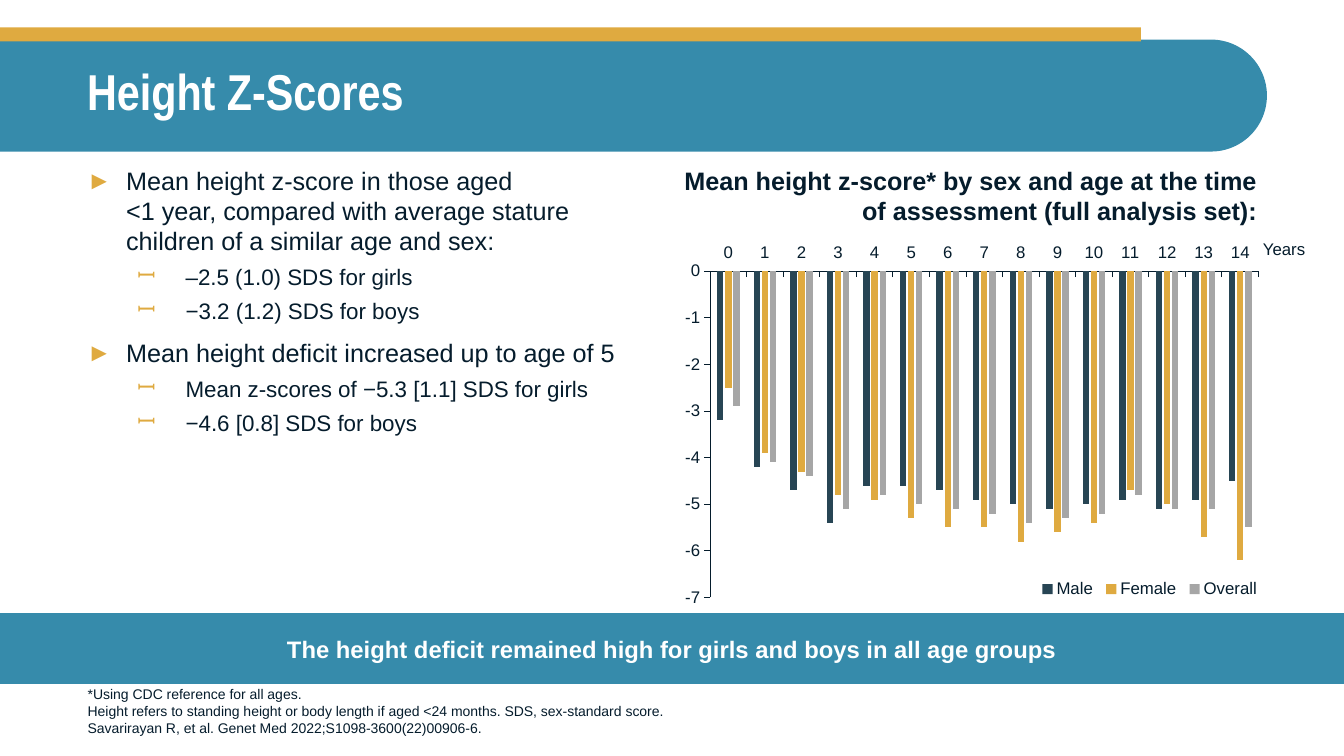
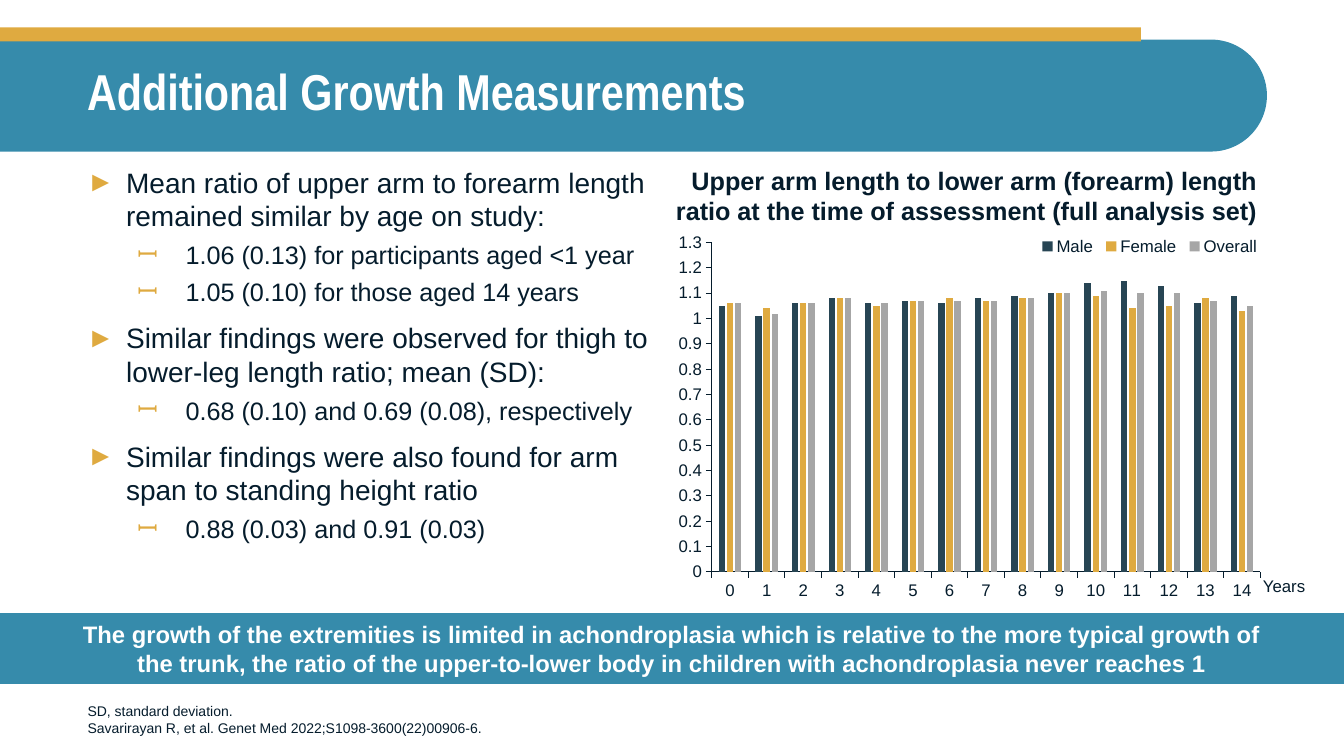
import pptx
import pptx.chart.data
import pptx.dml.color
import pptx.enum.chart
import pptx.enum.shapes
import pptx.enum.text
import pptx.util
from pptx.oxml import parse_xml
from pptx.oxml.ns import nsdecls, qn

Pt = pptx.util.Pt
colour = pptx.dml.color.RGBColor.from_string
SHAPE = pptx.enum.shapes.MSO_SHAPE
ALIGN = pptx.enum.text.PP_ALIGN
ANCHOR = pptx.enum.text.MSO_ANCHOR
TICK = pptx.enum.chart.XL_TICK_LABEL_POSITION

TEAL, GOLD, INK, WHITE = "368BAB", "DFAA40", "051C2C", "FFFFFF"
SERIES_COLOURS = ["274554", GOLD, "A6A6A6"]
AGES = [str(age) for age in range(15)]
REFERENCE = "Savarirayan R, et al. Genet Med 2022;S1098-3600(22)00906-6."

# Bullet character, left margin, hanging indent and space before, by level
BULLETS = [("►", 28, 28, 10), ("ꟷ", 70.5, 34.5, 5)]

SLIDES = [
    {
        "title": "Height Z-Scores",
        "bullet_sizes": (18, 16),
        "body_width": 411,
        "bullets": [
            (0, "Mean height z-score in those aged\v<1 year, compared with average stature "
                "children of a similar age and sex:"),
            (1, "–2.5 (1.0) SDS for girls"),
            (1, "−3.2 (1.2) SDS for boys"),
            (0, "Mean height deficit increased up to age of 5"),
            (1, "Mean z-scores of −5.3 [1.1] SDS for girls"),
            (1, "−4.6 [0.8] SDS for boys"),
        ],
        "heading": "Mean height z-score* by sex and age at the time of assessment (full analysis set):",
        "heading_left": 476,
        "message": "The height deficit remained high for girls and boys in all age groups",
        "notes": [
            "*Using CDC reference for all ages.",
            "Height refers to standing height or body length if aged <24 months. "
            "SDS, sex-standard score.",
            REFERENCE,
        ],
        "years_top": 167,
        "plot_box": (0.063, 0.1, 0.907, 0.857),
        "legend_top": 0.91,
        "age_labels": TICK.HIGH,
        "scale": {"minimum_scale": -7, "maximum_scale": 0, "major_unit": 1},
        "series": {
            "Male": [-3.2, -4.2, -4.7, -5.4, -4.6, -4.6, -4.7, -4.9, -5, -5.1, -5, -4.9, -5.1, -4.9, -4.5],
            "Female": [-2.5, -3.9, -4.3, -4.8, -4.9, -5.3, -5.5, -5.5, -5.8, -5.6, -5.4, -4.7, -5, -5.7, -6.2],
            "Overall": [-2.9, -4.1, -4.4, -5.1, -4.8, -5, -5.1, -5.2, -5.4, -5.3, -5.2, -4.8, -5.1, -5.1, -5.5],
        },
    },
    {
        "title": "Additional Growth Measurements",
        "bullet_sizes": (20, 18),
        "body_width": 421,
        "bullets": [
            (0, "Mean ratio of upper arm to forearm length remained similar by age on study:"),
            (1, "1.06 (0.13) for participants aged <1 year"),
            (1, "1.05 (0.10) for those aged 14 years"),
            (0, "Similar findings were observed for thigh to lower-leg length ratio; mean (SD):"),
            (1, "0.68 (0.10) and 0.69 (0.08), respectively"),
            (0, "Similar findings were also found for arm span to standing height ratio"),
            (1, "0.88 (0.03) and 0.91 (0.03)"),
        ],
        "heading": "Upper arm length to lower arm (forearm) length ratio at the time of assessment "
                   "(full analysis set)",
        "heading_left": 463,
        "message": "The growth of the extremities is limited in achondroplasia which is relative to the "
                   "more typical growth of the trunk, the ratio of the upper-to-lower body in children "
                   "with achondroplasia never reaches 1",
        "notes": ["SD, standard deviation.", REFERENCE],
        "years_top": 408,
        "plot_box": (0.066, 0.025, 0.907, 0.865),
        "legend_top": 0.01,
        "age_labels": TICK.LOW,
        "scale": {"minimum_scale": 0, "maximum_scale": 1.3, "major_unit": 0.1},
        "series": {
            "Male": [1.05, 1.01, 1.06, 1.08, 1.06, 1.07, 1.06, 1.08, 1.09, 1.1, 1.14, 1.15, 1.13, 1.06, 1.09],
            "Female": [1.06, 1.04, 1.06, 1.08, 1.05, 1.07, 1.08, 1.07, 1.08, 1.1, 1.09, 1.04, 1.05, 1.08, 1.03],
            "Overall": [1.06, 1.02, 1.06, 1.08, 1.06, 1.07, 1.07, 1.07, 1.08, 1.1, 1.11, 1.1, 1.1, 1.07, 1.05],
        },
    },
]


def add_panel(slide, kind, box, fill):
    panel = slide.shapes.add_shape(kind, *map(Pt, box))
    panel.shadow.inherit = False
    panel.fill.solid()
    panel.fill.fore_color.rgb = colour(fill)
    panel.line.fill.background()
    return panel


def write(shape, lines, size, ink=INK, bold=False, align=ALIGN.LEFT, anchor=ANCHOR.TOP,
          face="Arial", spacing=1, levels=None):
    """Fill a shape with paragraphs; levels gives the size of each bullet level."""
    frame = shape.text_frame
    frame.word_wrap = True
    frame.vertical_anchor = anchor
    for index, line in enumerate(lines):
        paragraph = frame.paragraphs[0] if index == 0 else frame.add_paragraph()
        level, text = line if levels else (0, line)
        paragraph.text = text
        paragraph.alignment = align
        paragraph.line_spacing = spacing
        if levels:
            size = levels[level]
            character, margin, hanging, before = BULLETS[level]
            paragraph.level = level
            if index:
                paragraph.space_before = Pt(before)
            properties = paragraph._p.get_or_add_pPr()
            properties.set("marL", str(Pt(margin)))
            properties.set("indent", str(-Pt(hanging)))
            for element in (f'<a:buClr {nsdecls("a")}><a:srgbClr val="{GOLD}"/></a:buClr>',
                            f'<a:buFont {nsdecls("a")} typeface="Arial"/>',
                            f'<a:buChar {nsdecls("a")} char="{character}"/>'):
                properties.append(parse_xml(element))
        for name, value in {"name": face, "size": Pt(size), "bold": bold}.items():
            setattr(paragraph.font, name, value)
        paragraph.font.color.rgb = colour(ink)


presentation = pptx.Presentation()
presentation.slide_width, presentation.slide_height = Pt(960), Pt(540)
layout = presentation.slide_layouts[5]
slides = [presentation.slides.add_slide(layout) for content in SLIDES]

# Title band and gold bar move to the layout, behind its placeholders
title_band = add_panel(slides[0], SHAPE.ROUND_2_SAME_RECTANGLE, (412.5, -384.25, 80, 905), TEAL)
title_band.rotation = 270
title_band.adjustments[0], title_band.adjustments[1] = 0, 0.5
gold_bar = add_panel(slides[0], SHAPE.RECTANGLE, (0, 19.5, 815, 10), GOLD)
for position, panel in enumerate((title_band, gold_bar), start=2):
    layout.shapes.element.insert(position, panel.element)

for slide, content in zip(slides, SLIDES):
    title = slide.shapes.title
    title.left, title.top, title.width, title.height = map(Pt, (55, 28, 850, 79))
    write(title, [content["title"]], 36, WHITE, True, anchor=ANCHOR.MIDDLE,
          face="Arial Narrow", spacing=0.9)

    body = slide.shapes.add_textbox(Pt(55), Pt(114.5), Pt(content["body_width"]), Pt(308))
    write(body, content["bullets"], None, levels=content["bullet_sizes"])

    footnote = slide.shapes.add_textbox(Pt(55.5), Pt(489), Pt(711), Pt(40.5))
    write(footnote, content["notes"], 10, anchor=ANCHOR.BOTTOM)

    message = add_panel(slide, SHAPE.RECTANGLE, (0, 438, 960, 50.5), TEAL)
    message.text_frame.margin_left = message.text_frame.margin_right = Pt(57)
    write(message, [content["message"]], 17, WHITE, True, ALIGN.CENTER, ANCHOR.MIDDLE)

    left = content["heading_left"]
    heading = slide.shapes.add_textbox(Pt(left), Pt(114.5), Pt(905 - left), Pt(51))
    write(heading, [content["heading"]], 18, bold=True, align=ALIGN.RIGHT)

    data = pptx.chart.data.CategoryChartData()
    data.categories = AGES
    for name, values in content["series"].items():
        data.add_series(name, values)
    chart = slide.shapes.add_chart(pptx.enum.chart.XL_CHART_TYPE.COLUMN_CLUSTERED,
                                   Pt(480), Pt(166.5), Pt(432), Pt(272), data).chart
    chart.has_title = False
    chart.font.name, chart.font.size = "Arial", Pt(12)
    chart.font.color.rgb = colour(INK)

    plot = chart.plots[0]
    plot.gap_width, plot.overlap, plot.vary_by_categories = 219, -27, False
    for series, fill in zip(plot.series, SERIES_COLOURS):
        series.invert_if_negative = False
        series.format.fill.solid()
        series.format.fill.fore_color.rgb = colour(fill)

    for axis in (chart.category_axis, chart.value_axis):
        axis.has_major_gridlines = False
        axis.major_tick_mark = pptx.enum.chart.XL_TICK_MARK.OUTSIDE
        axis.format.line.width = Pt(0.75)
        axis.format.line.color.rgb = colour(INK)
    chart.category_axis.tick_label_position = content["age_labels"]
    for name, value in content["scale"].items():
        setattr(chart.value_axis, name, value)

    chart.has_legend = True
    chart.legend.position = pptx.enum.chart.XL_LEGEND_POSITION.BOTTOM
    chart.legend.include_in_layout = False
    legend_box = (0.6, content["legend_top"], 0.38, 0.05)
    for tag, position, target, box in (
            ("c:plotArea", 0, '<c:layoutTarget val="inner"/>', content["plot_box"]),
            ("c:legend", 1, "", legend_box)):
        parent = chart.element.find(".//" + qn(tag))
        for automatic in parent.findall(qn("c:layout")):
            parent.remove(automatic)
        sides = "".join(f'<c:{side} val="{value}"/>' for side, value in zip("xywh", box))
        parent.insert(position, parse_xml(
            f'<c:layout {nsdecls("c")}><c:manualLayout>{target}<c:xMode val="edge"/>'
            f'<c:yMode val="edge"/>{sides}</c:manualLayout></c:layout>'))

    years = slide.shapes.add_textbox(Pt(895), Pt(content["years_top"]), Pt(60), Pt(21.5))
    write(years, ["Years"], 12)

presentation.save("out.pptx")
